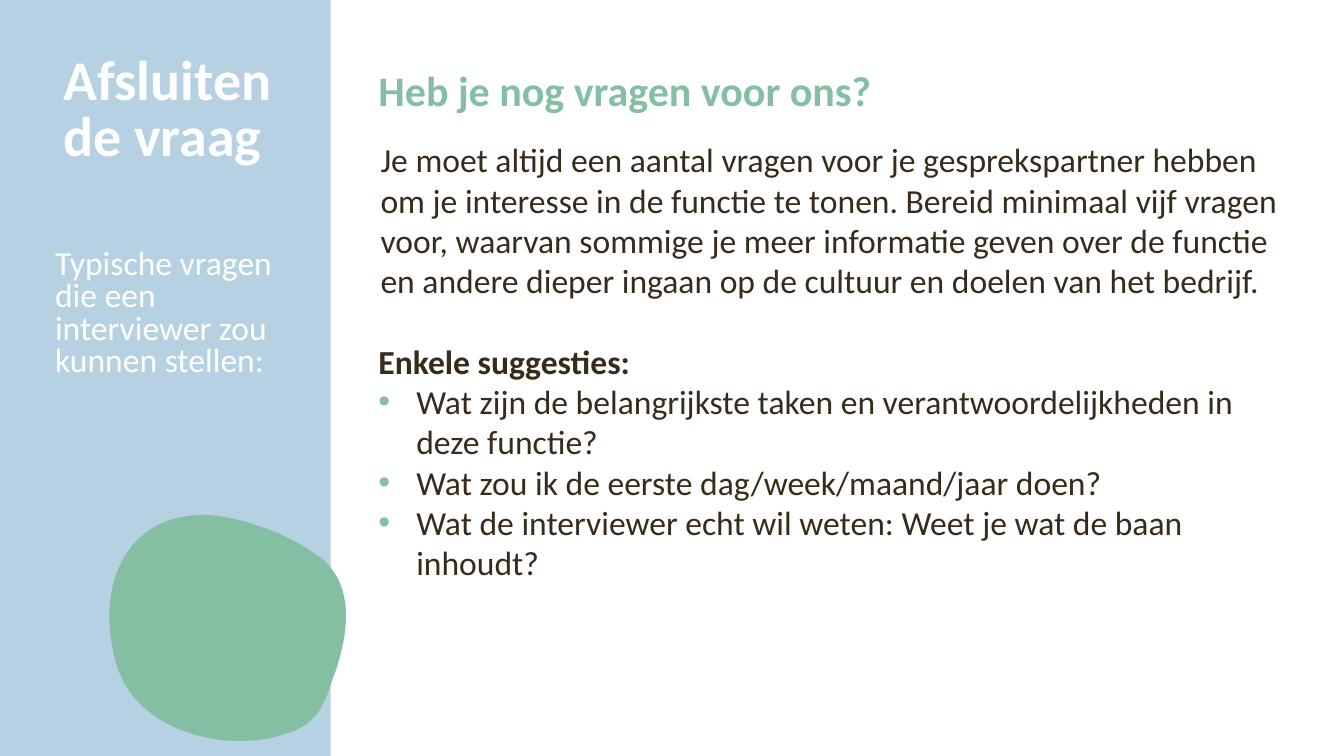
from lxml import etree
from pptx import Presentation
from pptx.dml.color import RGBColor
from pptx.enum.shapes import MSO_SHAPE
from pptx.enum.text import MSO_ANCHOR, MSO_AUTO_SIZE, PP_ALIGN
from pptx.oxml.ns import qn
from pptx.util import Pt

RECTANGLE = MSO_SHAPE.RECTANGLE
TOP = MSO_ANCHOR.TOP
NO_AUTOFIT = MSO_AUTO_SIZE.NONE
LEFT = PP_ALIGN.LEFT

PX = 9525
WIDTH, HEIGHT = 1280, 720
FONT = "Calibri"
BLUE = RGBColor(0xB6, 0xD1, 0xE1)
GREEN = RGBColor(0x84, 0xBF, 0xA4)
BROWN = RGBColor(0x38, 0x2B, 0x1B)
WHITE = RGBColor(0xFF, 0xFF, 0xFF)

BLOB_GRID = (228, 235)
BLOB_TURN = 82.8
BLOB_START = (138, 5)
BLOB_CURVES = [
    ((108, -4), (75, -4), (52, 23)),
    ((28, 49), (6, 92), (0, 126)),
    ((-11, 209), (62, 244), (136, 232)),
    ((207, 221), (243, 127), (222, 61)),
    ((215, 40), (196, 30), (178, 22)),
    ((166, 15), (151, 9), BLOB_START),
]
SUGGESTIONS = [
    "Wat zijn de belangrijkste taken en verantwoordelijkheden in deze functie?",
    "Wat zou ik de eerste dag/week/maand/jaar doen?",
    "Wat de interviewer echt wil weten: Weet je wat de baan inhoudt?",
]


def emu(*lengths):
    """Turn px lengths into EMU."""
    return [length * PX for length in lengths]


def prepare_frame(frame):
    """Make a text frame wrap and start at its top."""
    frame.word_wrap = True
    frame.auto_size = NO_AUTOFIT
    frame.vertical_anchor = TOP
    return frame


def add_frame(slide, box):
    """Add a text box and return its text frame."""
    return prepare_frame(slide.shapes.add_textbox(*emu(*box)).text_frame)


def add_bullet(paragraph, color):
    """Give a paragraph a coloured bullet."""
    properties = paragraph._p.get_or_add_pPr()
    bullet_color = etree.SubElement(properties, qn("a:buClr"))
    etree.SubElement(bullet_color, qn("a:srgbClr")).set("val", str(color))
    etree.SubElement(properties, qn("a:buFont")).set("typeface", "Arial")
    etree.SubElement(properties, qn("a:buChar")).set("char", "•")


def write(frame, text, size=24, color=BROWN, bold=False, spacing=None,
          before=0, margin=0, indent=0, bullet=None):
    """Write one formatted paragraph at the end of a text frame."""
    first = frame.paragraphs[0]
    paragraph = frame.add_paragraph() if first.runs else first
    paragraph.alignment = LEFT
    paragraph.line_spacing = Pt(spacing) if spacing else 1.0
    paragraph.space_before = Pt(before)
    properties = paragraph._p.get_or_add_pPr()
    properties.set("marL", str(margin * PX))
    properties.set("indent", str(indent * PX))
    if bullet:
        add_bullet(paragraph, bullet)
    run = paragraph.add_run()
    run.text = text
    run.font.name = FONT
    run.font.size = Pt(size)
    run.font.bold = bold
    run.font.color.rgb = color


def paint(shape, color):
    """Fill a shape with a plain colour, without line or shadow."""
    shape.shadow.inherit = False
    shape.fill.solid()
    shape.fill.fore_color.rgb = color
    shape.line.fill.background()


def place(shape, box):
    """Move and size a shape to a box in px."""
    shape.left, shape.top, shape.width, shape.height = emu(*box)


def bend_outline(shape, grid, curves):
    """Replace the straight sides of a freeform by cubic curves on a grid."""
    outline = shape._element.find(".//" + qn("a:path"))
    for name, length in zip("wh", grid):
        outline.set(name, str(length))
    for side, curve in zip(outline.findall(qn("a:lnTo")), curves):
        side.clear()
        side.tag = qn("a:cubicBezTo")
        for x, y in curve:
            point = etree.SubElement(side, qn("a:pt"))
            point.set("x", str(x))
            point.set("y", str(y))
    start = outline.find(qn("a:moveTo")).find(qn("a:pt"))
    start.set("x", str(curves[-1][-1][0]))
    start.set("y", str(curves[-1][-1][1]))


def draw_blob(slide, box):
    """Draw the rounded green form in its box."""
    builder = slide.shapes.build_freeform(*BLOB_START, scale=PX)
    builder.add_line_segments([curve[-1] for curve in BLOB_CURVES], close=True)
    blob = builder.convert_to_shape()
    bend_outline(blob, BLOB_GRID, BLOB_CURVES)
    place(blob, box)
    blob.rotation = BLOB_TURN
    paint(blob, GREEN)


def draw_sidebar(slide, left, top, width, height):
    """Draw the blue side panel with title, form and introduction."""
    panel = slide.shapes.add_shape(RECTANGLE, *emu(left, top, width, height))
    paint(panel, BLUE)
    title = slide.shapes.title
    place(title, (left + 51, top + 48, 236, 240))
    panel._element.addnext(title._element)
    write(prepare_frame(title.text_frame), "Afsluitende vraag",
          size=40, color=WHITE, bold=True, spacing=40.2)
    draw_blob(slide, (left + 108, top + 485, 219, 226))
    introduction = add_frame(slide, (left + 43, top + 233, 252, 202))
    write(introduction, "Typische vragen die een interviewer zou kunnen stellen:",
          color=WHITE, spacing=23.2)


def draw_content(slide, left, top, width, height):
    """Write the heading, advice and suggestions."""
    advice = add_frame(slide, (left, top + 71, width, height - 71))
    write(advice, "Je moet altijd een aantal vragen voor je gesprekspartner "
          "hebben om je interesse in de functie te tonen. Bereid minimaal vijf "
          "vragen voor, waarvan sommige je meer informatie geven over de "
          "functie en andere dieper ingaan op de cultuur en doelen van het "
          "bedrijf.", margin=2)
    write(advice, "Enkele suggesties:", bold=True, before=28.5)
    for suggestion in SUGGESTIONS:
        write(advice, suggestion, margin=36, indent=-36, bullet=GREEN)
    heading = add_frame(slide, (left, top, 839, 55))
    write(heading, "Heb je nog vragen voor ons?", size=30, color=GREEN, bold=True)


def main():
    """Build and save the slide."""
    presentation = Presentation()
    presentation.slide_width, presentation.slide_height = emu(WIDTH, HEIGHT)
    slide = presentation.slides.add_slide(presentation.slide_layouts[5])
    draw_sidebar(slide, 0, 0, 315, HEIGHT)
    draw_content(slide, 351, 57, 899, 624)
    presentation.save("out.pptx")


if __name__ == "__main__":
    main()
